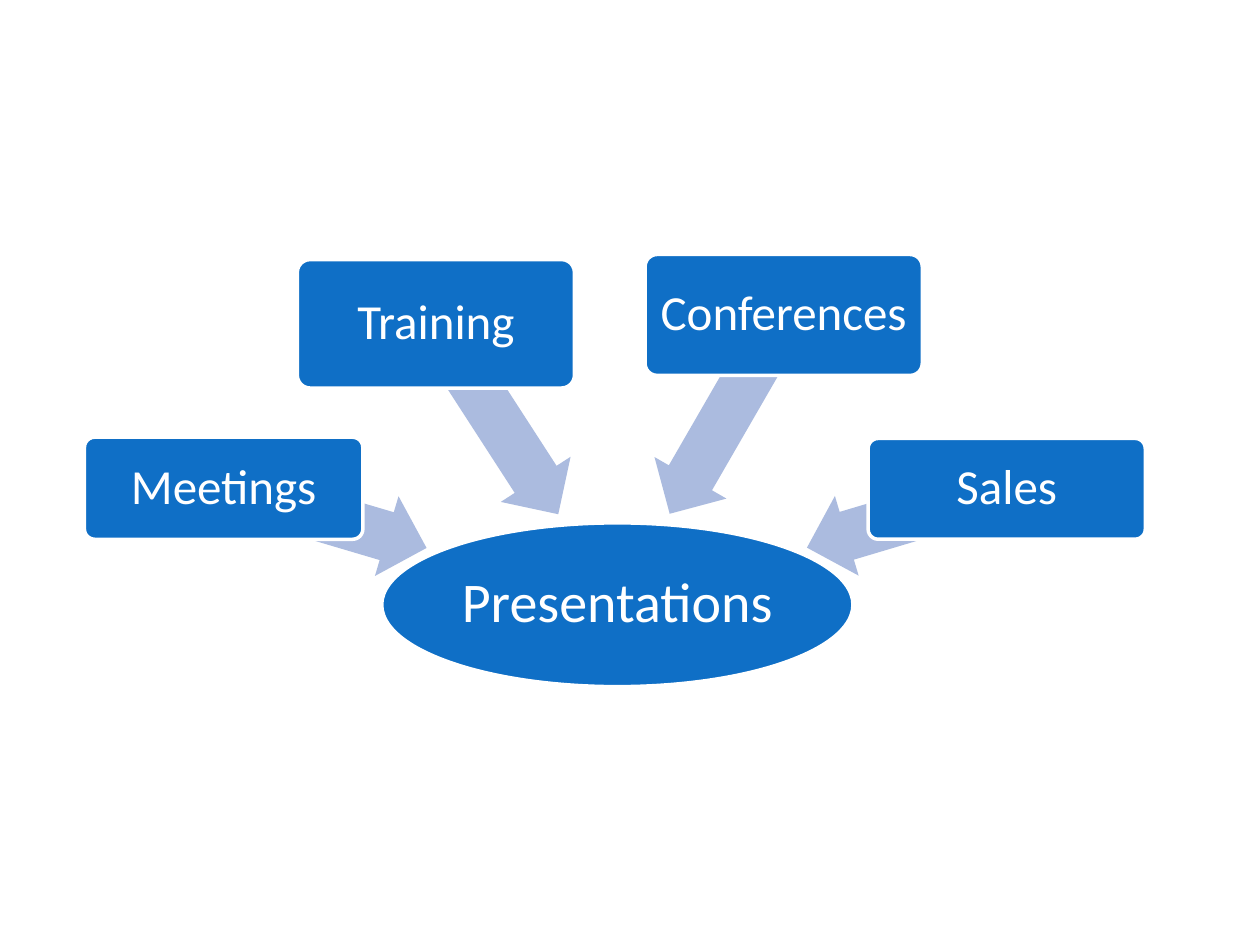
from pptx import Presentation
from pptx.dml.color import RGBColor
from pptx.enum.shapes import MSO_SHAPE
from pptx.enum.text import MSO_ANCHOR, PP_ALIGN
from pptx.util import Inches, Pt

BLUE = "0F6FC6"
PALE_BLUE = "ABBBDF"
WHITE = "FFFFFF"
ARROW_HEIGHT = 0.66

TOPICS = [
    ("Meetings", (0.67, 3.47, 2.21, 0.81), (1.74, 3.78, 1.68), 196.5),
    ("Training", (2.36, 2.06, 2.2, 1.02), (3.05, 3, 1.79), 237.1),
    ("Conferences", (5.12, 2.02, 2.2, 0.96), (4.86, 2.96, 1.82), 300),
    ("Sales", (6.89, 3.48, 2.2, 0.8), (6.37, 3.78, 1.66), 343.4),
]


def color(value):
    return RGBColor.from_string(value)


def add_filled_shape(page, kind, place, fill):
    shape = page.shapes.add_shape(kind, *(Inches(length) for length in place))
    shape.shadow.inherit = False
    shape.fill.solid()
    shape.fill.fore_color.rgb = color(fill)
    shape.line.fill.background()
    return shape


def add_label(shape, text, size, inset):
    shape.line.color.rgb = color(WHITE)
    shape.line.width = Pt(2)
    frame = shape.text_frame
    frame.word_wrap = True
    frame.vertical_anchor = MSO_ANCHOR.MIDDLE
    frame.margin_left = frame.margin_right = Inches(inset)
    frame.margin_top = frame.margin_bottom = Inches(inset)
    para = frame.paragraphs[0]
    para.alignment = PP_ALIGN.CENTER
    para.line_spacing = 0.9
    span = para.add_run()
    span.text = text
    span.font.name = "Calibri"
    span.font.size = Pt(size)
    span.font.color.rgb = color(WHITE)


def add_hub(page, text, place):
    hub = add_filled_shape(page, MSO_SHAPE.OVAL, place, BLUE)
    add_label(hub, text, 32, 0.02)


def add_arrow(page, place, angle):
    arrow = add_filled_shape(
        page, MSO_SHAPE.LEFT_ARROW, (*place, ARROW_HEIGHT), PALE_BLUE
    )
    arrow.adjustments[0] = 0.6
    arrow.adjustments[1] = 0.5
    arrow.rotation = angle


def add_topic(page, text, place):
    box = add_filled_shape(page, MSO_SHAPE.ROUNDED_RECTANGLE, place, BLUE)
    box.adjustments[0] = 0.1
    add_label(box, text, 28, 0.06)


def main():
    deck = Presentation()
    deck.slide_width = Inches(10)
    deck.slide_height = Inches(7.5)
    page = deck.slides.add_slide(deck.slide_layouts.get_by_name("Blank"))
    add_hub(page, "Presentations", (3.03, 4.15, 3.74, 1.3))
    for text, box_place, arrow_place, angle in TOPICS:
        add_arrow(page, arrow_place, angle)
        add_topic(page, text, box_place)
    deck.save("out.pptx")


if __name__ == "__main__":
    main()
